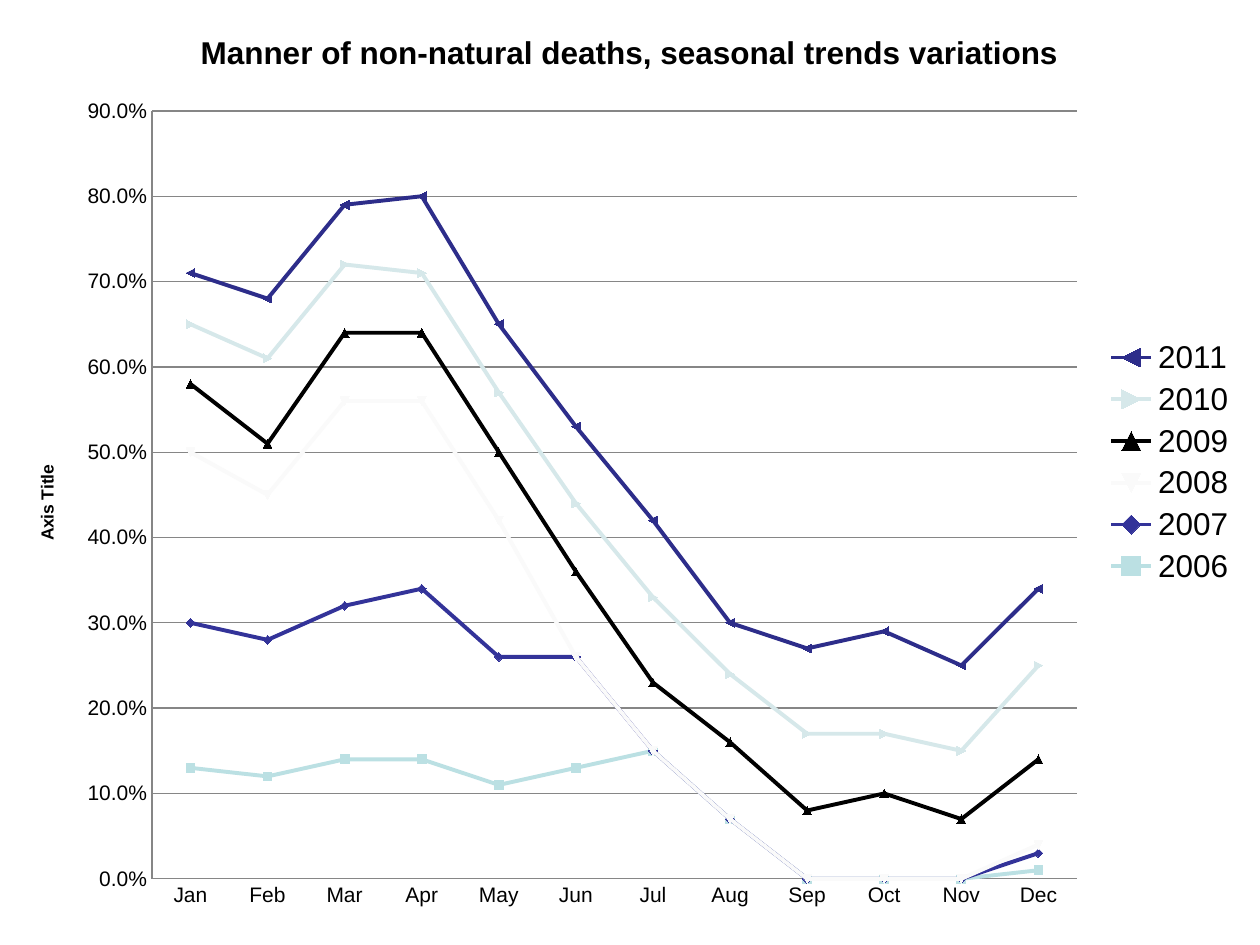
from dataclasses import dataclass

from pptx import Presentation
from pptx.chart.axis import _BaseAxis as Axis
from pptx.chart.chart import Chart
from pptx.chart.data import CategoryChartData as ChartData
from pptx.dml.color import RGBColor as Color
from pptx.enum.chart import XL_CHART_TYPE as ChartType
from pptx.enum.chart import XL_LEGEND_POSITION as LegendPosition
from pptx.enum.chart import XL_TICK_MARK as TickMark
from pptx.oxml import parse_xml
from pptx.oxml.ns import nsdecls
from pptx.text.text import TextFrame
from pptx.util import Emu, Pt

PIXELS_PER_INCH = 126
PERCENT_FORMAT = "0.0%"
MONTHS = "Jan Feb Mar Apr May Jun Jul Aug Sep Oct Nov Dec".split()


@dataclass(frozen=True)
class Theme:
    font: str = "Arial"
    text: str = "000000"
    grid: str = "868686"
    pale_teal: str = "BBE0E3"
    indigo: str = "333399"
    near_white: str = "FAFAFA"
    black: str = "000000"
    mist: str = "D6E8EA"
    navy: str = "2D2D8A"
    title_size: int = 18
    legend_size: int = 18
    label_size: int = 12
    base_size: int = 10
    line_width: float = 2.25
    grid_width: float = 0.75


@dataclass(frozen=True)
class Box:
    left: int
    top: int
    width: int
    height: int


@dataclass(frozen=True)
class YearSeries:
    year: str
    color: str
    percentages: tuple[int, ...]


THEME = Theme()
SLIDE_BOX = Box(0, 0, 1260, 945)
CHART_BOX = Box(10, 1, 1239, 922)
PLOT_BOX = Box(152, 111, 925, 768)
YEARS = (
    YearSeries("2006", THEME.pale_teal, (13, 12, 14, 14, 11, 13, 15, 7, 0, 0, 0, 1)),
    YearSeries("2007", THEME.indigo, (17, 16, 18, 20, 15, 13, 0, 0, 0, 0, 0, 2)),
    YearSeries("2008", THEME.near_white, (20, 17, 24, 22, 16, 0, 0, 0, 0, 0, 0, 1)),
    YearSeries("2009", THEME.black, (8, 6, 8, 8, 8, 10, 8, 9, 8, 10, 7, 10)),
    YearSeries("2010", THEME.mist, (7, 10, 8, 7, 7, 8, 10, 8, 9, 7, 8, 11)),
    YearSeries("2011", THEME.navy, (6, 7, 7, 9, 8, 9, 9, 6, 10, 12, 10, 9)),
)


def px(length: int) -> Emu:
    return Emu(round(length * 914400 / PIXELS_PER_INCH))


def format_font(font, *, size: int, bold: bool = False) -> None:
    font.name = THEME.font
    font.size = Pt(size)
    font.bold = bold
    font.color.rgb = Color.from_string(THEME.text)


def write_text(frame: TextFrame, text: str, *, size: int, bold: bool = False) -> None:
    run = frame.paragraphs[0].add_run()
    run.text = text
    format_font(run.font, size=size, bold=bold)


def format_line(line, *, color: str, width: float) -> None:
    line.color.rgb = Color.from_string(color)
    line.width = Pt(width)


def format_axis(axis: Axis) -> None:
    axis.major_tick_mark = TickMark.NONE
    axis.minor_tick_mark = TickMark.NONE
    format_font(axis.tick_labels.font, size=THEME.label_size)
    format_line(axis.format.line, color=THEME.grid, width=THEME.grid_width)


def place_plot(chart: Chart, plot: Box, frame: Box) -> None:
    fractions = {
        "x": (plot.left - frame.left) / frame.width,
        "y": (plot.top - frame.top) / frame.height,
        "w": plot.width / frame.width,
        "h": plot.height / frame.height,
    }
    modes = "".join(f'<c:{axis}Mode val="edge"/>' for axis in "xy")
    values = "".join(f'<c:{name} val="{value:.4f}"/>' for name, value in fractions.items())
    layout = parse_xml(
        f'<c:layout {nsdecls("c")}><c:manualLayout><c:layoutTarget val="inner"/>'
        f"{modes}{values}</c:manualLayout></c:layout>"
    )
    plot_area = chart.element.xpath("c:chart/c:plotArea")[0]
    for existing in plot_area.xpath("c:layout"):
        plot_area.remove(existing)
    plot_area.insert(0, layout)


def add_trend_chart(slide, box: Box, years: tuple[YearSeries, ...]) -> Chart:
    data = ChartData(number_format=PERCENT_FORMAT)
    data.categories = MONTHS
    for entry in years:
        data.add_series(entry.year, [value / 100 for value in entry.percentages])
    bounds = (px(box.left), px(box.top), px(box.width), px(box.height))
    chart = slide.shapes.add_chart(ChartType.LINE_MARKERS_STACKED, *bounds, data).chart
    format_font(chart.font, size=THEME.base_size)
    chart.plots[0].vary_by_categories = False
    for series, entry in zip(chart.plots[0].series, years):
        series.smooth = False
        format_line(series.format.line, color=entry.color, width=THEME.line_width)
        marker = series.marker.format
        marker.fill.solid()
        marker.fill.fore_color.rgb = Color.from_string(entry.color)
        marker.line.color.rgb = Color.from_string(entry.color)
    return chart


def format_chart(chart: Chart) -> None:
    chart.has_title = True
    write_text(
        chart.chart_title.text_frame,
        "Manner of non-natural deaths, seasonal trends variations",
        size=THEME.title_size,
        bold=True,
    )
    chart.has_legend = True
    chart.legend.position = LegendPosition.RIGHT
    chart.legend.include_in_layout = False
    format_font(chart.legend.font, size=THEME.legend_size)

    format_axis(chart.category_axis)
    value_axis = chart.value_axis
    format_axis(value_axis)
    value_axis.minimum_scale = 0
    value_axis.maximum_scale = 0.9
    value_axis.major_unit = 0.1
    value_axis.tick_labels.number_format = PERCENT_FORMAT
    value_axis.tick_labels.number_format_is_linked = False
    value_axis.has_major_gridlines = True
    format_line(value_axis.major_gridlines.format.line, color=THEME.grid, width=THEME.grid_width)
    write_text(value_axis.axis_title.text_frame, "Axis Title", size=THEME.base_size, bold=True)


def main() -> None:
    presentation = Presentation()
    presentation.slide_width = px(SLIDE_BOX.width)
    presentation.slide_height = px(SLIDE_BOX.height)
    slide = presentation.slides.add_slide(presentation.slide_layouts[6])
    chart = add_trend_chart(slide, CHART_BOX, YEARS)
    format_chart(chart)
    place_plot(chart, PLOT_BOX, CHART_BOX)
    presentation.save("out.pptx")


if __name__ == "__main__":
    main()
